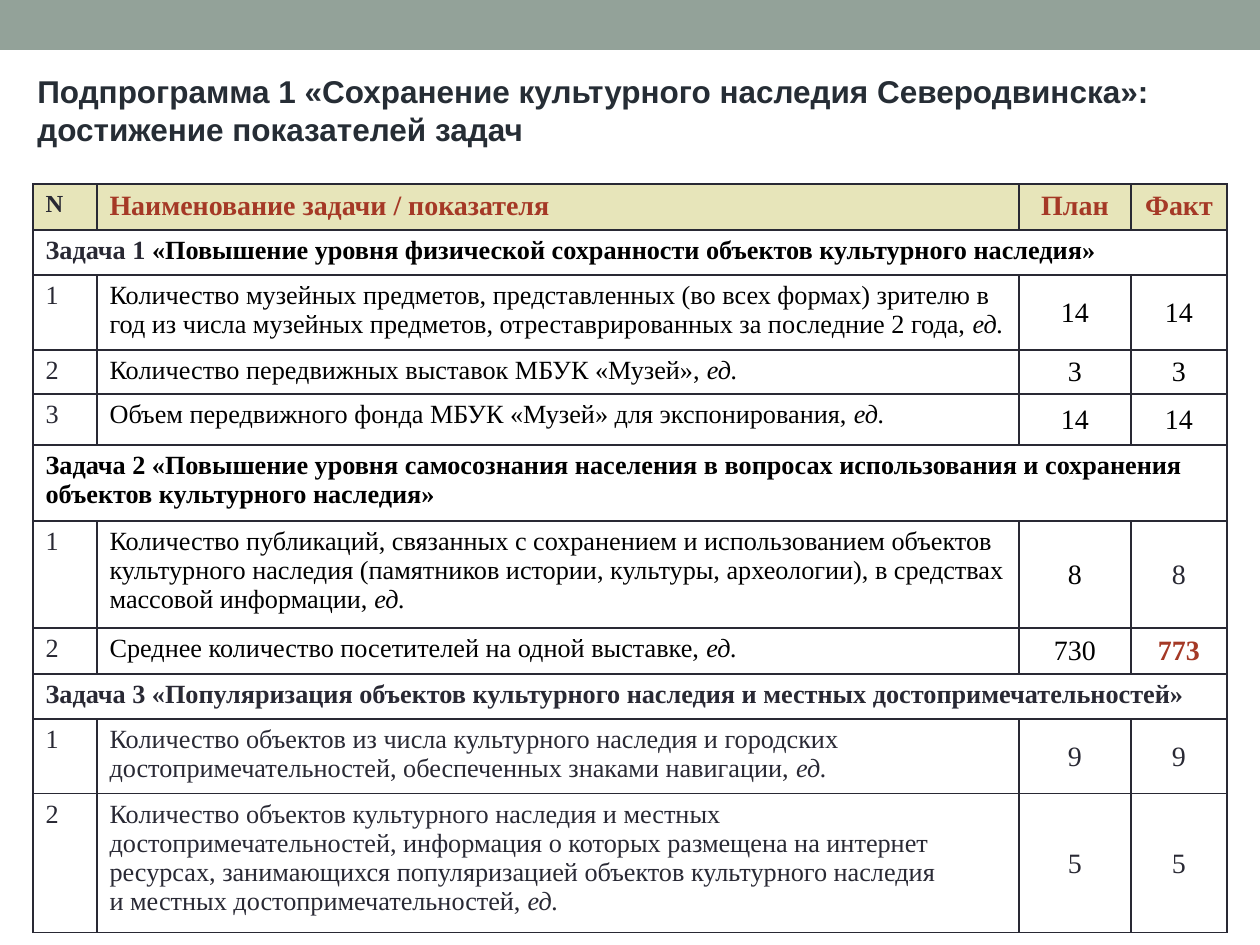
import pptx
import pptx.dml.color
import pptx.enum.shapes
import pptx.enum.text
import pptx.oxml
import pptx.oxml.ns
import pptx.util

EMU_PER_PX = 914400 / 126
DARK, BLACK, RED = "292934", "000000", "A53926"
WHITE, HEADER_FILL, BAR_FILL, TITLE_COLOR = "FFFFFF", "E7E5BA", "93A299", "262D35"
ALIGN = pptx.enum.text.PP_ALIGN
ANCHOR = pptx.enum.text.MSO_ANCHOR

COLUMN_WIDTHS = [64, 922, 112, 96]
ROW_HEIGHTS = [46, 45, 75, 44, 51, 76, 107, 46, 45, 75, 139]
HEADINGS = ["Наименование задачи / показателя", "План", "Факт"]
UNIT = "ед."

TASKS = [
    ([("Задача 1 ", DARK),
      ("«Повышение уровня физической сохранности объектов культурного наследия»", BLACK)],
     BLACK, BLACK, [
        (["Количество музейных предметов, представленных (во всех формах) зрителю в год "
          "из числа музейных предметов, отреставрированных за последние 2 года, "], 14, 14),
        (["Количество передвижных выставок МБУК «Музей», "], 3, 3),
        (["Объем передвижного фонда МБУК «Музей» для экспонирования, "], 14, 14)]),
    ([("Задача 2 «Повышение уровня самосознания населения в вопросах использования "
       "и сохранения объектов культурного наследия»", BLACK)],
     BLACK, DARK, [
        (["Количество публикаций, связанных с сохранением и использованием объектов "
          "культурного наследия (памятников истории, культуры, археологии), "
          "в средствах массовой информации, "], 8, 8),
        (["Среднее количество посетителей на одной выставке, "], 730, 773)]),
    ([("Задача 3 «Популяризация объектов культурного наследия и местных "
       "достопримечательностей»", DARK)],
     DARK, DARK, [
        (["Количество объектов из числа культурного наследия и городских "
          "достопримечательностей, обеспеченных знаками навигации, "], 9, 9),
        (["Количество объектов культурного наследия и местных достопримечательностей, "
          "информация о которых размещена на интернет ресурсах, занимающихся "
          "популяризацией объектов культурного наследия",
          "и местных достопримечательностей, "], 5, 5)]),
]


def px(value):
    return pptx.util.Emu(round(value * EMU_PER_PX))


def color(value):
    return pptx.dml.color.RGBColor.from_string(value)


class SlideBuilder:
    font = "Times New Roman"

    def __init__(self, slide):
        self.slide = slide

    def run(self, paragraph, text, size, hue, bold=False, italic=False, font=None):
        run = paragraph.add_run()
        run.text = text
        run.font.name = font or self.font
        run.font.size = pptx.util.Pt(size)
        run.font.color.rgb = color(hue)
        run.font.bold = bold
        run.font.italic = italic

    def bar(self, left, top, width, height, fill):
        shape = self.slide.shapes.add_shape(
            pptx.enum.shapes.MSO_SHAPE.RECTANGLE, px(left), px(top), px(width), px(height))
        shape.shadow.inherit = False
        shape.fill.solid()
        shape.fill.fore_color.rgb = color(fill)
        shape.line.fill.background()

    def title(self, left, top, width, height, text):
        shape = self.slide.shapes.add_textbox(px(left), px(top), px(width), px(height))
        shape.text_frame.word_wrap = True
        self.run(shape.text_frame.paragraphs[0], text, 18, TITLE_COLOR, True, font="Arial")

    def table(self, left, top, widths, heights):
        frame = self.slide.shapes.add_table(
            len(heights), len(widths), px(left), px(top), px(sum(widths)), px(sum(heights)))
        table = frame.table
        table.first_row = table.horz_banding = False
        for column, width in zip(table.columns, widths):
            column.width = px(width)
        for row, height in zip(table.rows, heights):
            row.height = px(height)
        for cell in table.iter_cells():
            self.borders(cell)
            self.fill(cell, WHITE)
        return table

    def borders(self, cell):
        properties = cell._tc.get_or_add_tcPr()
        for side in ("lnL", "lnR", "lnT", "lnB"):
            properties.append(pptx.oxml.parse_xml(
                f'<a:{side} {pptx.oxml.ns.nsdecls("a")} w="12700"><a:solidFill>'
                f'<a:srgbClr val="{DARK}"/></a:solidFill></a:{side}>'))

    def fill(self, cell, hue):
        cell.fill.solid()
        cell.fill.fore_color.rgb = color(hue)

    def header(self, table):
        cells = table.rows[0].cells
        for cell in cells:
            self.fill(cell, HEADER_FILL)
        self.run(cells[0].text_frame.paragraphs[0], "N", 14, DARK, True)
        for index, heading in enumerate(HEADINGS, 1):
            paragraph = cells[index].text_frame.paragraphs[0]
            paragraph.alignment = ALIGN.LEFT if index == 1 else ALIGN.CENTER
            self.run(paragraph, heading, 16, RED, True)

    def task(self, table, row, pieces):
        cell = table.cell(row, 0)
        cell.merge(table.cell(row, len(table.columns) - 1))
        for text, hue in pieces:
            self.run(cell.text_frame.paragraphs[0], text, 15, hue, True)

    def indicator(self, cells, number, lines, hue):
        self.run(cells[0].text_frame.paragraphs[0], str(number), 15, DARK)
        frame = cells[1].text_frame
        for index, line in enumerate(lines):
            paragraph = frame.add_paragraph() if index else frame.paragraphs[0]
            self.run(paragraph, line, 15, hue)
        self.run(paragraph, UNIT, 15, hue, italic=True)

    def value(self, cell, number, hue, bold=False):
        cell.vertical_anchor = ANCHOR.MIDDLE
        cell.margin_left = cell.margin_right = cell.margin_top = px(1)
        cell.margin_bottom = 0
        paragraph = cell.text_frame.paragraphs[0]
        paragraph.alignment = ALIGN.CENTER
        self.run(paragraph, str(number), 16, hue, bold)


def main():
    presentation = pptx.Presentation()
    presentation.slide_width, presentation.slide_height = px(1260), px(945)
    builder = SlideBuilder(presentation.slides.add_slide(presentation.slide_layouts[6]))
    builder.bar(0, 0, 1260, 50, BAR_FILL)

    table = builder.table(33, 184, COLUMN_WIDTHS, ROW_HEIGHTS)
    builder.header(table)
    row = 1
    for pieces, text_hue, fact_hue, indicators in TASKS:
        builder.task(table, row, pieces)
        for number, (lines, plan, fact) in enumerate(indicators, 1):
            cells = table.rows[row + number].cells
            exceeded = fact > plan
            builder.indicator(cells, number, lines, text_hue)
            builder.value(cells[2], plan, text_hue)
            builder.value(cells[3], fact, RED if exceeded else fact_hue, exceeded)
        row += len(indicators) + 1

    builder.title(25, 66, 1211, 89, "Подпрограмма 1 «Сохранение культурного наследия "
                  "Северодвинска»: достижение показателей задач")
    presentation.save("out.pptx")


if __name__ == "__main__":
    main()
